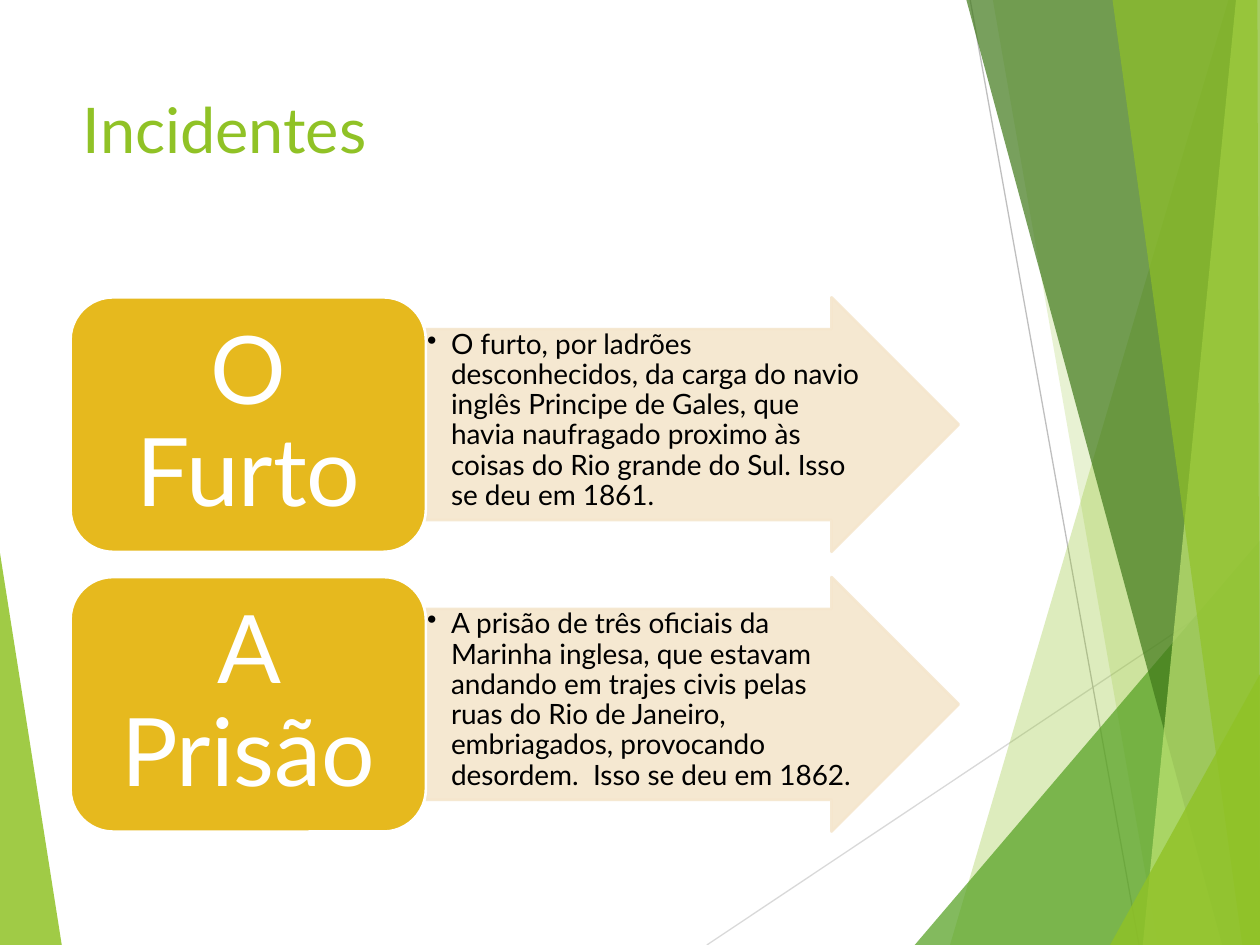
import pptx
import pptx.dml.color
import pptx.enum.shapes
import pptx.enum.text
import pptx.oxml.ns
import pptx.util
from lxml import etree

PX = 9144  # EMU per px, 100 px to the inch
WIDTH, HEIGHT = 1000, 750
FONT = "Lato"
GREEN, GOLD, CREAM, WHITE = "90C226", "E6B91E", "F5E6CD", "FFFFFF"

SHAPES = pptx.enum.shapes.MSO_SHAPE
ALIGN = pptx.enum.text.PP_ALIGN
ANCHOR = pptx.enum.text.MSO_ANCHOR

# Outline points, colour, opacity in percent; back to front
FACETS = [
    ([(0, 439), (49, 750), (0, 750)], GREEN, 85),
    ([(975, 0), (754, 750), (1000, 750), (1000, 0)], GREEN, 30),
    ([(788, 0), (919, 750), (1000, 750), (1000, 0)], GREEN, 20),
    ([(726, 750), (1000, 429), (1000, 750)], "54A021", 72),
    ([(767, 0), (970, 750), (1000, 750), (1000, 0)], "3F7819", 70),
    ([(981, 0), (907, 750), (1000, 750), (1000, 0)], "C0E474", 70),
    ([(883, 0), (986, 750), (1000, 750), (998, 0)], GREEN, 65),
    ([(881, 750), (1000, 535), (1000, 750)], GREEN, 80),
]
RAYS = [((561, 750), (1000, 457), "D9D9D9"), ((770, 0), (904, 750), "BFBFBF")]

INCIDENTS = [
    ("O Furto",
     "O furto, por ladrões desconhecidos, da carga do navio inglês Principe de Gales, "
     "que havia naufragado proximo às coisas do Rio grande do Sul. Isso se deu em 1861."),
    ("A Prisão",
     "A prisão de três oficiais da Marinha inglesa, que estavam andando em trajes civis "
     "pelas ruas do Rio de Janeiro, embriagados, provocando desordem.  Isso se deu em 1862."),
]


def px(*lengths):
    return [pptx.util.Emu(length * PX) for length in lengths]


def set_color(color_format, color):
    color_format.rgb = pptx.dml.color.RGBColor.from_string(color)


def set_fill(fill, color, opacity=100):
    fill.solid()
    set_color(fill.fore_color, color)
    if opacity < 100:
        tag = pptx.oxml.ns.qn("a:srgbClr")
        for element in fill._xPr.find(pptx.oxml.ns.qn("a:solidFill")).iter(tag):
            alpha = etree.SubElement(element, pptx.oxml.ns.qn("a:alpha"))
            alpha.set("val", str(opacity * 1000))


def add_text(slide, box, text, size, color, align=ALIGN.LEFT, anchor=ANCHOR.TOP,
             insets=(1, 1), spacing=1.0, bullet_indent=0):
    frame = slide.shapes.add_textbox(*px(*box)).text_frame
    frame.word_wrap = True
    frame.vertical_anchor = anchor
    frame.margin_left = frame.margin_right = px(insets[0])[0]
    frame.margin_top = frame.margin_bottom = px(insets[1])[0]
    paragraph = frame.paragraphs[0]
    paragraph.alignment = align
    paragraph.line_spacing = spacing
    if bullet_indent:
        properties = paragraph._p.get_or_add_pPr()
        properties.set("marL", str(bullet_indent * PX))
        properties.set("indent", str(-bullet_indent * PX))
        bullet = etree.SubElement(properties, pptx.oxml.ns.qn("a:buChar"))
        bullet.set("char", "•")
    run = paragraph.add_run()
    run.text = text
    run.font.name = FONT
    run.font.size = pptx.util.Pt(size)
    set_color(run.font.color, color)


def add_block(slide, kind, box, fill, line, opacity=100):
    shape = slide.shapes.add_shape(kind, *px(*box))
    shape.shadow.inherit = False
    set_fill(shape.fill, fill, opacity)
    set_fill(shape.line.fill, line, opacity)
    shape.line.width = pptx.util.Pt(1.5)
    return shape


def add_facet(slide, points, color, opacity):
    builder = slide.shapes.build_freeform(*points[0], scale=PX)
    builder.add_line_segments(points[1:], close=True)
    shape = builder.convert_to_shape()
    shape.shadow.inherit = False
    set_fill(shape.fill, color, opacity)
    shape.line.fill.background()


def add_ray(slide, start, end, color):
    connector = slide.shapes.add_connector(
        pptx.enum.shapes.MSO_CONNECTOR.STRAIGHT, *px(*start, *end))
    set_color(connector.line.color, color)
    connector.line.width = pptx.util.Pt(0.75)
    etree.SubElement(connector._element.spPr, pptx.oxml.ns.qn("a:effectLst"))


def add_backdrop(slide):
    add_facet(slide, *FACETS[0])
    for ray in RAYS:
        add_ray(slide, *ray)
    for facet in FACETS[1:]:
        add_facet(slide, *facet)


def add_incident(slide, box, name, description):
    left, top, width, height = box
    label_width = width * 2 // 5
    arrow_left = left + label_width
    arrow_width = width - label_width

    # Arrow with the description on its shaft
    arrow = add_block(slide, SHAPES.RIGHT_ARROW, (arrow_left, top, arrow_width, height),
                      CREAM, CREAM, opacity=90)
    arrow.adjustments[0] = 0.75
    arrow.adjustments[1] = 0.5
    shaft_top = height // 8
    add_text(slide, (arrow_left, top + shaft_top, arrow_width - 76, height - 2 * shaft_top),
             description, 16, "000000", spacing=0.9, bullet_indent=19)

    # Rounded label
    add_block(slide, SHAPES.ROUNDED_RECTANGLE, (left, top, label_width, height), GOLD, WHITE)
    add_text(slide, (left + 10, top + 10, label_width - 20, height - 20), name, 54, WHITE,
             align=ALIGN.CENTER, anchor=ANCHOR.MIDDLE, insets=(23, 11), spacing=0.9)


def add_incident_list(slide, box):
    left, top, width, height = box
    gap = 20
    row_height = (height - gap * (len(INCIDENTS) - 1)) // len(INCIDENTS)
    for index, (name, description) in enumerate(INCIDENTS):
        row_top = top + index * (row_height + gap)
        add_incident(slide, (left, row_top, width, row_height), name, description)


def main():
    presentation = pptx.Presentation()
    presentation.slide_width, presentation.slide_height = px(WIDTH, HEIGHT)
    slide = presentation.slides.add_slide(presentation.slide_layouts[6])
    add_backdrop(slide)
    add_text(slide, (56, 67, 705, 144), "Incidentes", 36, GREEN, insets=(10, 5))
    add_incident_list(slide, (56, 236, 705, 425))
    presentation.save("out.pptx")


if __name__ == "__main__":
    main()
